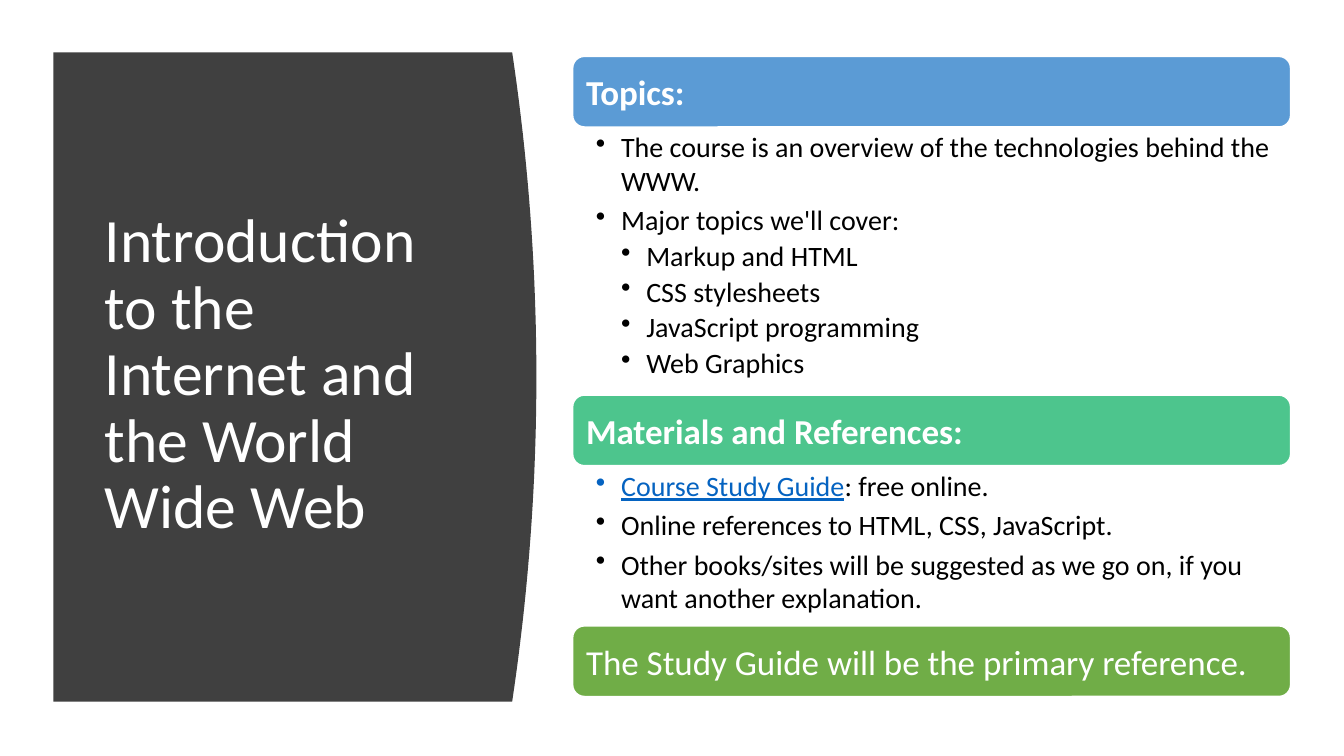
import pptx
import pptx.dml.color
import pptx.enum.shapes
import pptx.enum.text
import pptx.oxml.ns
import pptx.util
from lxml import etree

Inches, Pt = pptx.util.Inches, pptx.util.Pt
ANCHOR = pptx.enum.text.MSO_ANCHOR

# Content
FONT = "Calibri"
WHITE, BLACK, CHARCOAL, LINK = "FFFFFF", "000000", "404040", "0563C1"
TITLE = "Introduction to the Internet and the World Wide Web"

# Sections: top, heading, bold heading, colour, body height, [(level, text runs)]
SECTIONS = [
    (0.56, "Topics:", True, "5B9BD5", 2.66, [
        (1, [("The course is an overview of the technologies behind the WWW.", BLACK)]),
        (1, [("Major topics we'll cover:", BLACK)]),
        (2, [("Markup and HTML", BLACK)]),
        (2, [("CSS stylesheets", BLACK)]),
        (2, [("JavaScript programming", BLACK)]),
        (2, [("Web Graphics", BLACK)]),
    ]),
    (3.92, "Materials and References:", True, "4DC58D", 1.58, [
        (1, [("Course Study Guide", LINK), (": free online.", BLACK)]),
        (1, [("Online references to HTML, CSS, JavaScript.", BLACK)]),
        (1, [("Other books/sites will be suggested as we go on, "
              "if you want another explanation.", BLACK)]),
    ]),
    (6.21, "The Study Guide will be the primary reference.", False, "70AD47", 0, []),
]

# Layout in inches
SECTION_LEFT, SECTION_WIDTH, BANNER_HEIGHT = 5.68, 7.12, 0.7
PANEL_LEFT, PANEL_TOP, PANEL_BOTTOM = 0.53, 0.52, 6.96
PANEL_RIGHT, PANEL_BULGE, CURVE_STEPS = 5.08, 0.24, 40
INDENT = 0.25


def color(hex_string):
    return pptx.dml.color.RGBColor.from_string(hex_string)


def apply_format(target, values):
    for name, value in values.items():
        setattr(target, name, value)


def set_frame(frame, anchor, left, top, right, bottom):
    apply_format(frame, {
        "word_wrap": True, "vertical_anchor": anchor,
        "margin_left": Inches(left), "margin_top": Inches(top),
        "margin_right": Inches(right), "margin_bottom": Inches(bottom),
    })


def add_run(paragraph, text, size, hex_string, bold=False):
    run = paragraph.add_run()
    run.text = text
    apply_format(run.font, {"name": FONT, "size": Pt(size), "bold": bold,
                            "underline": hex_string == LINK})
    run.font.color.rgb = color(hex_string)


def add_bullet(paragraph, level):
    properties = paragraph._p.get_or_add_pPr()
    properties.set("marL", str(Inches(INDENT * level)))
    properties.set("indent", str(-Inches(INDENT)))
    etree.SubElement(properties, pptx.oxml.ns.qn("a:buChar"), char="•")


def add_panel(slide):
    middle = (PANEL_TOP + PANEL_BOTTOM) / 2
    half = (PANEL_BOTTOM - PANEL_TOP) / 2
    curve = []
    for step in range(CURVE_STEPS + 1):
        offset = 2 * step / CURVE_STEPS - 1
        x = PANEL_RIGHT + PANEL_BULGE * (1 - offset ** 2)
        curve.append((Inches(x), Inches(middle + half * offset)))
    outline = slide.shapes.build_freeform(Inches(PANEL_LEFT), Inches(PANEL_TOP))
    outline.add_line_segments(curve + [(Inches(PANEL_LEFT), Inches(PANEL_BOTTOM))])
    panel = outline.convert_to_shape()
    panel.shadow.inherit = False
    panel.fill.solid()
    panel.fill.fore_color.rgb = color(CHARCOAL)
    panel.line.fill.background()


def add_title(slide):
    title = slide.shapes.add_textbox(Inches(0.94), Inches(1.11), Inches(3.74), Inches(5.24))
    set_frame(title.text_frame, ANCHOR.MIDDLE, 0.1, 0.05, 0.1, 0.05)
    paragraph = title.text_frame.paragraphs[0]
    paragraph.line_spacing = 0.9
    add_run(paragraph, TITLE, 44, WHITE)


def add_banner(slide, top, heading, bold, fill):
    banner = slide.shapes.add_shape(
        pptx.enum.shapes.MSO_SHAPE.ROUNDED_RECTANGLE,
        Inches(SECTION_LEFT), Inches(top), Inches(SECTION_WIDTH), Inches(BANNER_HEIGHT))
    banner.shadow.inherit = False
    banner.fill.solid()
    banner.fill.fore_color.rgb = color(fill)
    banner.line.color.rgb = color(WHITE)
    banner.line.width = Pt(1)
    # The rounded corners add a little to the text inset
    set_frame(banner.text_frame, ANCHOR.MIDDLE, 0.1, 0.1, 0.1, 0.1)
    paragraph = banner.text_frame.paragraphs[0]
    paragraph.alignment = pptx.enum.text.PP_ALIGN.LEFT
    add_run(paragraph, heading, 25, WHITE, bold)


def add_body(slide, top, height, items):
    body = slide.shapes.add_textbox(
        Inches(SECTION_LEFT), Inches(top), Inches(SECTION_WIDTH), Inches(height))
    set_frame(body.text_frame, ANCHOR.TOP, 0.23, 0.03, 0.19, 0.03)
    for index, (level, runs) in enumerate(items):
        paragraph = body.text_frame.paragraphs[0] if index == 0 else body.text_frame.add_paragraph()
        add_bullet(paragraph, level)
        apply_format(paragraph, {"level": level, "space_after": Pt(4),
                                 "line_spacing": 1.0 if level == 1 else 0.9})
        for text, hex_string in runs:
            add_run(paragraph, text, 20, hex_string)


def main():
    deck = pptx.Presentation()
    deck.slide_width, deck.slide_height = Inches(13.33), Inches(7.5)
    slide = deck.slides.add_slide(deck.slide_layouts[6])

    # Left panel and title
    add_panel(slide)
    add_title(slide)

    # Right column
    for top, heading, bold, fill, body_height, items in SECTIONS:
        add_banner(slide, top, heading, bold, fill)
        if items:
            add_body(slide, top + BANNER_HEIGHT, body_height, items)

    deck.save("out.pptx")


if __name__ == "__main__":
    main()
